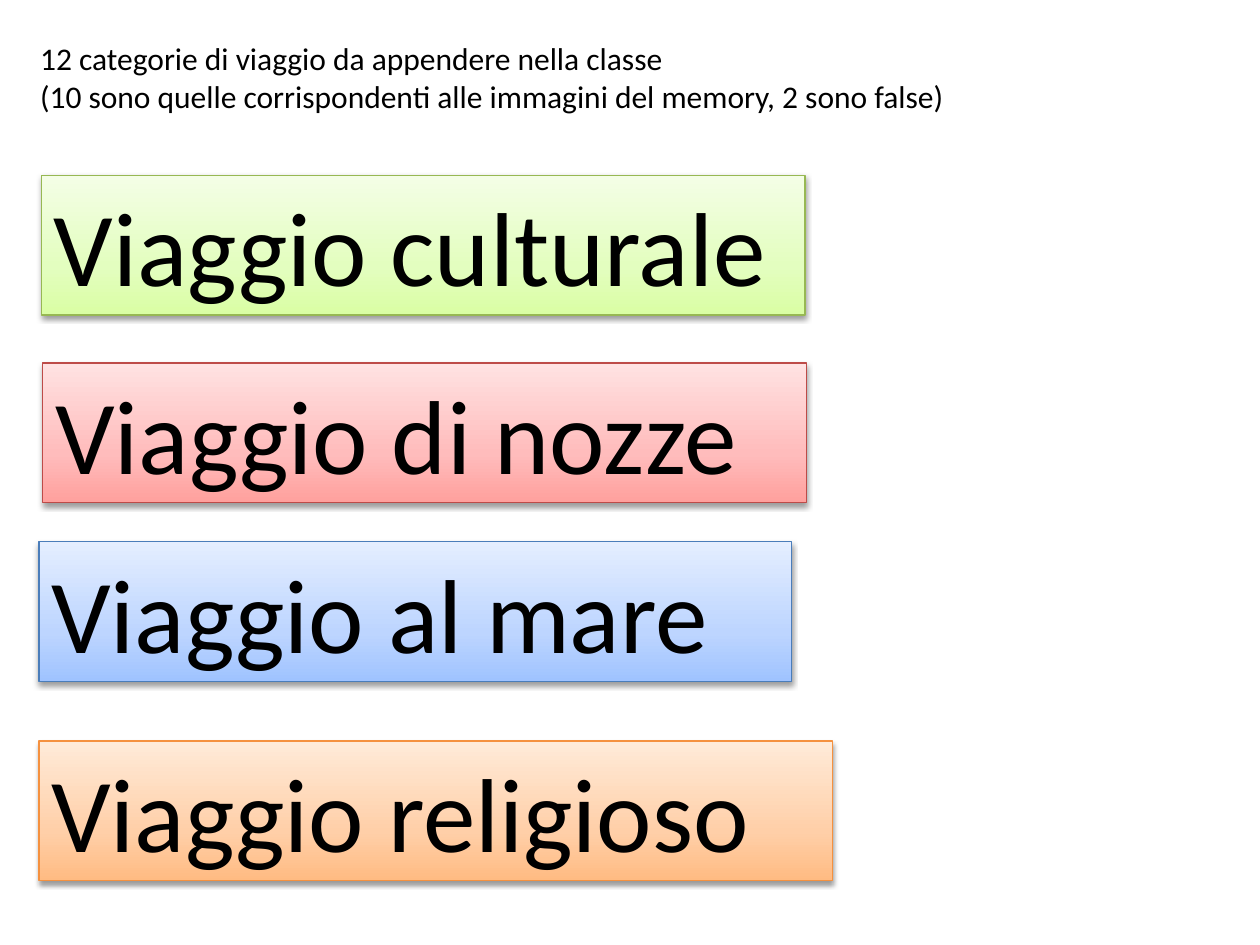
import copy

import lxml.etree
import pptx
import pptx.dml.color
import pptx.enum.shapes
import pptx.enum.text
import pptx.oxml
import pptx.oxml.ns
import pptx.util

Inches = pptx.util.Inches
RGBColor = pptx.dml.color.RGBColor
qn = pptx.oxml.ns.qn

BLACK = RGBColor(0x00, 0x00, 0x00)
GREEN = [RGBColor(0xDA, 0xFE, 0xA4), RGBColor(0xE3, 0xFE, 0xBF), RGBColor(0xF4, 0xFE, 0xE6)]
GREEN_EDGE = RGBColor(0x97, 0xB8, 0x53)
RED = [RGBColor(0xFF, 0xA0, 0x9D), RGBColor(0xFF, 0xBC, 0xBC), RGBColor(0xFF, 0xE2, 0xE2)]
RED_EDGE = RGBColor(0xBD, 0x4B, 0x48)
BLUE = [RGBColor(0x9F, 0xC3, 0xFF), RGBColor(0xBD, 0xD5, 0xFF), RGBColor(0xE4, 0xEE, 0xFF)]
BLUE_EDGE = RGBColor(0x4A, 0x7D, 0xBA)
ORANGE = [RGBColor(0xFF, 0xBB, 0x82), RGBColor(0xFF, 0xCF, 0xA8), RGBColor(0xFF, 0xEB, 0xD9)]
ORANGE_EDGE = RGBColor(0xF5, 0x91, 0x3F)
STOP_POSITIONS = (0, 0.35, 1)
CARD_HEIGHT = 1.11

CARDS = [
    ("Viaggio culturale", 0.33, 1.39, 6.06, GREEN, GREEN_EDGE),
    ("Viaggio di nozze", 0.34, 2.88, 6.06, RED, RED_EDGE),
    ("Viaggio al mare", 0.31, 4.3, 5.97, BLUE, BLUE_EDGE),
    ("Viaggio religioso", 0.31, 5.88, 6.3, ORANGE, ORANGE_EDGE),
]


def write_text(frame, text, *, size, color=BLACK, font="Calibri"):
    frame.word_wrap = True
    frame.auto_size = pptx.enum.text.MSO_AUTO_SIZE.SHAPE_TO_FIT_TEXT
    frame.vertical_anchor = pptx.enum.text.MSO_ANCHOR.TOP
    frame.text = text
    for paragraph in frame.paragraphs:
        paragraph.alignment = pptx.enum.text.PP_ALIGN.LEFT
        for run in paragraph.runs:
            run.font.name = font
            run.font.size = pptx.util.Pt(size)
            run.font.color.rgb = color


def fill_gradient(shape, colors):
    shape.fill.gradient()
    shape.fill.gradient_angle = 90
    stop_list = shape._element.spPr.find(".//" + qn("a:gsLst"))
    stop_list.insert(1, copy.deepcopy(stop_list[0]))
    for stop, position, color in zip(shape.fill.gradient_stops, STOP_POSITIONS, colors):
        stop.position = position
        stop.color.rgb = color


def add_soft_shadow(shape):
    shape.shadow.inherit = False
    effects = shape._element.spPr.find(qn("a:effectLst"))
    shadow = lxml.etree.SubElement(
        effects, qn("a:outerShdw"), blurRad="40000", dist="20000", dir="5400000", rotWithShape="0"
    )
    color = lxml.etree.SubElement(shadow, qn("a:srgbClr"), val="000000")
    lxml.etree.SubElement(color, qn("a:alpha"), val="38000")


def add_heading(slide, left, top, width, height):
    heading = slide.shapes.add_textbox(left, top, width, height)
    write_text(
        heading.text_frame,
        "12 categorie di viaggio da appendere nella classe\n"
        "(10 sono quelle corrispondenti alle immagini del memory, 2 sono false)",
        size=18,
    )


def add_travel_card(slide, left, top, width, height, category, colors, edge):
    card = slide.shapes.add_shape(
        pptx.enum.shapes.MSO_SHAPE.RECTANGLE, left, top, width, height
    )
    fill_gradient(card, colors)
    card.line.color.rgb = edge
    card.line.width = pptx.util.Pt(0.75)
    add_soft_shadow(card)
    write_text(card.text_frame, category, size=60)


def main():
    presentation = pptx.Presentation()
    presentation.slide_width = Inches(10)
    presentation.slide_height = Inches(7.5)
    slide = presentation.slides.add_slide(presentation.slide_layouts[6])
    add_heading(slide, Inches(0.22), Inches(0.26), Inches(7.47), Inches(0.71))
    for category, left, top, width, colors, edge in CARDS:
        add_travel_card(
            slide, Inches(left), Inches(top), Inches(width), Inches(CARD_HEIGHT),
            category, colors, edge,
        )
    presentation.save("out.pptx")


if __name__ == "__main__":
    main()
